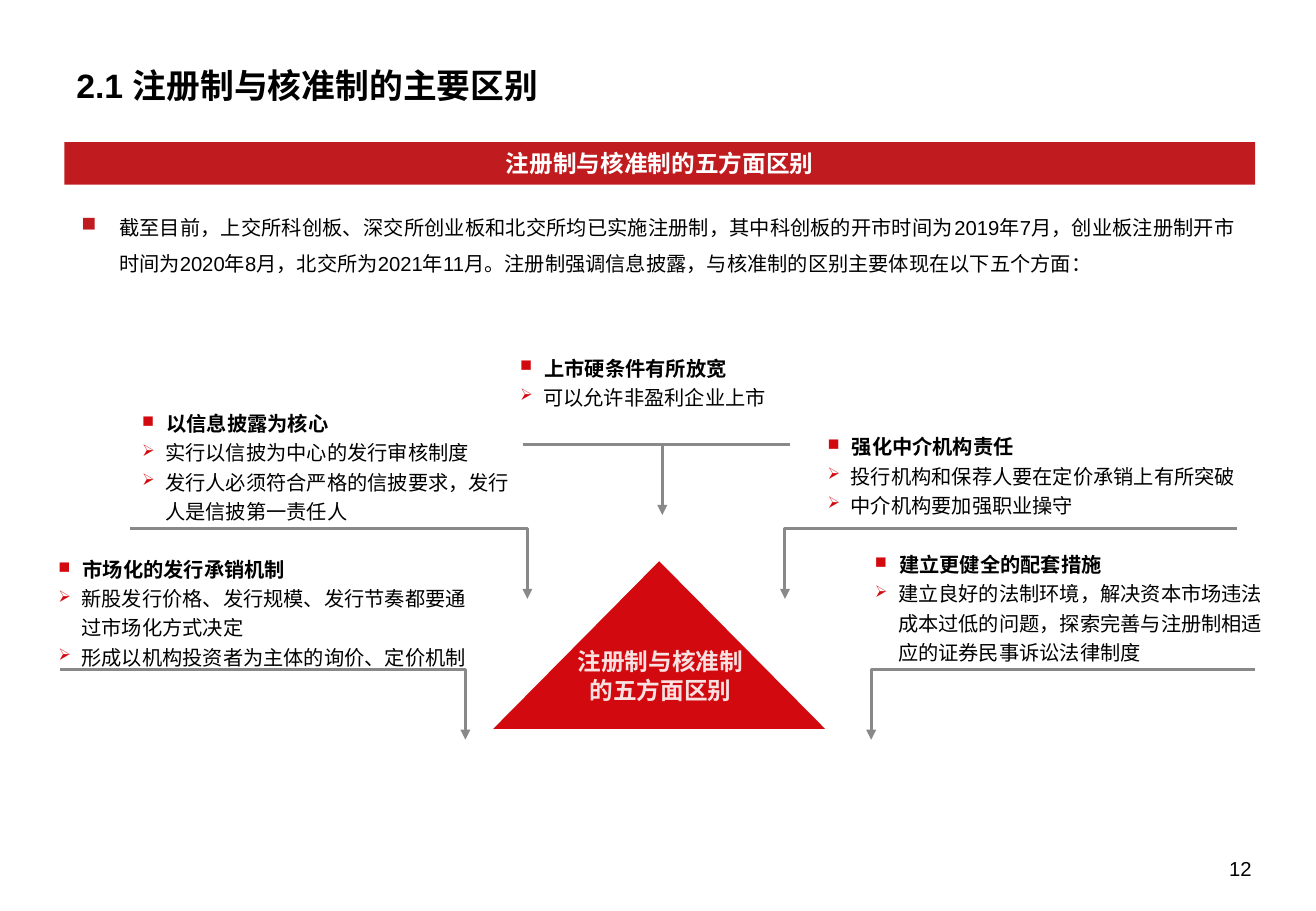
from lxml.etree import SubElement
from pptx import Presentation
from pptx.dml.color import RGBColor
from pptx.enum.shapes import MSO_CONNECTOR, MSO_SHAPE
from pptx.enum.text import MSO_ANCHOR, PP_ALIGN
from pptx.oxml.ns import qn
from pptx.util import Inches, Pt

BLACK = RGBColor(0x00, 0x00, 0x00)
WHITE = RGBColor(0xFF, 0xFF, 0xFF)
RED = RGBColor(0xD2, 0x0A, 0x10)
BANNER_RED = RGBColor(0xC0, 0x1C, 0x20)
PALE_PINK = RGBColor(0xF9, 0xE1, 0xE1)
GRAY = RGBColor(0x89, 0x89, 0x89)

TOPIC = "注册制与核准制的五方面区别"
ARROW_DROP = 0.58
CALLOUTS = [
    ((4.19, 2.88, 2.85, 0.62), 1.0, "上市硬条件有所放宽", ["可以允许非盈利企业上市"]),
    ((1.08, 3.3, 3.27, 0.62), 1.2, "以信息披露为核心",
     ["实行以信披为中心的发行审核制度", "发行人必须符合严格的信披要求，发行人是信披第一责任人"]),
    ((6.72, 3.49, 3.61, 0.62), 1.2, "强化中介机构责任",
     ["投行机构和保荐人要在定价承销上有所突破", "中介机构要加强职业操守"]),
    ((7.11, 4.46, 3.45, 0.99), 1.2, "建立更健全的配套措施",
     ["建立良好的法制环境，解决资本市场违法成本过低的问题，探索完善与注册制相适应的证券民事诉讼法律制度"]),
    ((0.39, 4.5, 3.59, 0.62), 1.2, "市场化的发行承销机制",
     ["新股发行价格、发行规模、发行节奏都要通过市场化方式决定", "形成以机构投资者为主体的询价、定价机制"]),
]
ELBOWS = [(7.17, 5.51, 10.33), (3.83, 5.51, 0.49), (6.46, 4.35, 10.18), (4.34, 4.35, 1.07)]


class SlideBuilder:
    """Draws styled elements on the current slide."""

    def __init__(self, slide, font_name="Arial"):
        self.slide = slide
        self.font_name = font_name

    def add_text(self, paragraph, text, size=12, color=BLACK, bold=False, align=PP_ALIGN.LEFT,
                 bullet=None, bullet_color=RED, bullet_size=None, indent=0, line_spacing=1.0):
        if bullet:
            properties = paragraph._p.get_or_add_pPr()
            properties.set("marL", str(Inches(indent)))
            properties.set("indent", str(-Inches(indent)))
            color_element = SubElement(properties, qn("a:buClr"))
            SubElement(color_element, qn("a:srgbClr")).set("val", str(bullet_color))
            if bullet_size:
                SubElement(properties, qn("a:buSzPct")).set("val", str(bullet_size * 1000))
            SubElement(properties, qn("a:buChar")).set("char", bullet)
        paragraph.alignment = align
        paragraph.line_spacing = line_spacing
        run = paragraph.add_run()
        run.text = text
        run.font.name = self.font_name
        run.font.size = Pt(size)
        run.font.bold = bold
        run.font.color.rgb = color

    def text_box(self, box, insets=(0.1, 0.05), anchor=MSO_ANCHOR.TOP):
        frame = self.slide.shapes.add_textbox(*map(Inches, box)).text_frame
        frame.word_wrap = True
        frame.vertical_anchor = anchor
        frame.margin_left = frame.margin_right = Inches(insets[0])
        frame.margin_top = frame.margin_bottom = Inches(insets[1])
        return frame

    def label(self, box, text, insets=(0.1, 0.05), anchor=MSO_ANCHOR.TOP, **text_format):
        frame = self.text_box(box, insets, anchor)
        self.add_text(frame.paragraphs[0], text, **text_format)

    def callout(self, box, heading_spacing, heading, points):
        frame = self.text_box(box, (0.09, 0.05))
        self.add_text(frame.paragraphs[0], heading, bold=True, bullet="■", bullet_size=80,
                      indent=0.2, line_spacing=heading_spacing)
        for point in points:
            self.add_text(frame.add_paragraph(), point, bullet="➢", bullet_size=80,
                          indent=0.19, line_spacing=1.2)

    def filled_shape(self, kind, box, color):
        shape = self.slide.shapes.add_shape(kind, *map(Inches, box))
        shape.shadow.inherit = False
        shape.fill.solid()
        shape.fill.fore_color.rgb = color
        shape.line.fill.background()
        return shape

    def banner(self, box, text):
        shape = self.filled_shape(MSO_SHAPE.RECTANGLE, box, BANNER_RED)
        shape.text_frame.vertical_anchor = MSO_ANCHOR.MIDDLE
        self.add_text(shape.text_frame.paragraphs[0], text, size=14, color=WHITE, bold=True,
                      align=PP_ALIGN.CENTER)

    def style_line(self, shape, arrow):
        shape.line.color.rgb = GRAY
        shape.line.width = Pt(1.75)
        if arrow:
            SubElement(shape.line._get_or_add_ln(), qn("a:headEnd")).set("type", "triangle")

    def straight_line(self, start, end, arrow=False):
        connector = self.slide.shapes.add_connector(
            MSO_CONNECTOR.STRAIGHT, *map(Inches, start + end))
        self.style_line(connector, arrow)
        SubElement(connector._element.spPr, qn("a:effectLst"))

    def elbow_arrow(self, corner_x, corner_y, far_x):
        builder = self.slide.shapes.build_freeform(Inches(corner_x), Inches(corner_y + ARROW_DROP))
        corners = [(Inches(x), Inches(corner_y)) for x in (corner_x, far_x)]
        builder.add_line_segments(corners, close=False)
        shape = builder.convert_to_shape()
        shape.shadow.inherit = False
        shape.fill.background()
        self.style_line(shape, arrow=True)


def main():
    presentation = Presentation()
    presentation.slide_width = Inches(10.83)
    presentation.slide_height = Inches(7.5)
    builder = SlideBuilder(presentation.slides.add_slide(presentation.slide_layouts[6]))

    builder.label((9.81, 7.03, 0.49, 0.22), "12", insets=(0, 0), anchor=MSO_ANCHOR.BOTTOM,
                  align=PP_ALIGN.RIGHT)
    builder.label((0.53, 0.1, 8.47, 0.77), "2.1 注册制与核准制的主要区别", insets=(0.1, 0),
                  anchor=MSO_ANCHOR.BOTTOM, size=20, bold=True)
    builder.banner((0.53, 1.17, 9.8, 0.35), TOPIC)
    builder.label(
        (0.56, 1.59, 9.71, 0.76),
        "截至目前，上交所科创板、深交所创业板和北交所均已实施注册制，其中科创板的开市时间为2019年7月，"
        "创业板注册制开市时间为2020年8月，北交所为2021年11月。注册制强调信息披露，"
        "与核准制的区别主要体现在以下五个方面：",
        insets=(0.11, 0.06), anchor=MSO_ANCHOR.MIDDLE, align=PP_ALIGN.JUSTIFY,
        bullet="■", bullet_color=BANNER_RED, indent=0.31, line_spacing=1.5)

    builder.filled_shape(MSO_SHAPE.ISOSCELES_TRIANGLE, (4.06, 4.62, 2.73, 1.38), RED)
    builder.label((4.56, 5.28, 1.75, 0.88), TOPIC, size=14, color=PALE_PINK, bold=True,
                  align=PP_ALIGN.CENTER)
    for callout in CALLOUTS:
        builder.callout(*callout)
    for elbow in ELBOWS:
        builder.elbow_arrow(*elbow)
    builder.straight_line((4.3, 3.66), (6.5, 3.66))
    builder.straight_line((5.45, 3.66 + ARROW_DROP), (5.45, 3.66), arrow=True)

    presentation.save("out.pptx")


if __name__ == "__main__":
    main()
